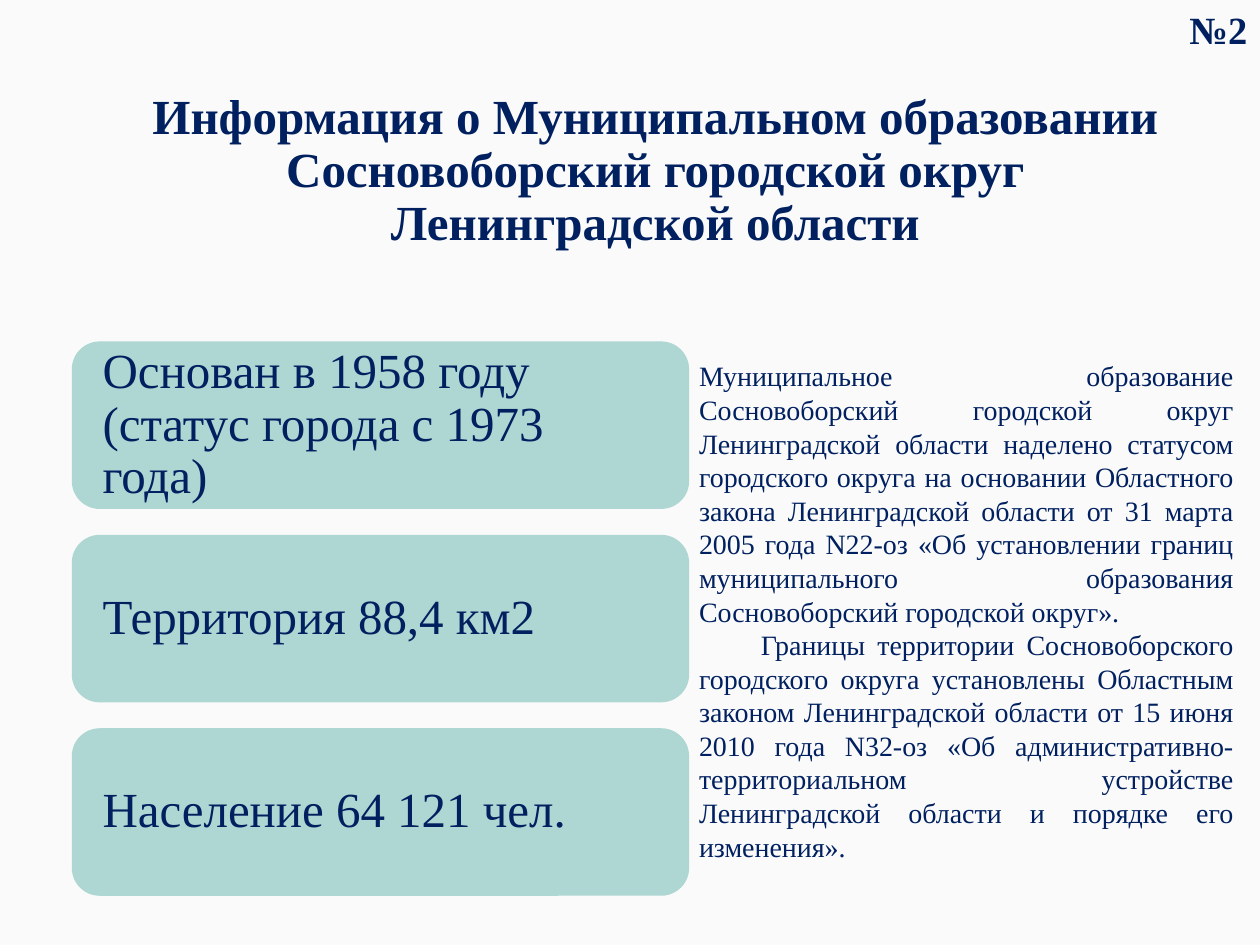
from pptx import Presentation
from pptx.dml.color import RGBColor
from pptx.enum.shapes import MSO_SHAPE
from pptx.enum.text import MSO_ANCHOR, MSO_AUTO_SIZE, PP_ALIGN
from pptx.util import Inches, Pt

COLUMNS, ROWS = 100, 75
TITLE = ("Информация о Муниципальном образовании "
         "Сосновоборский городской округ Ленинградской области")
FACTS = [
    "Основан в 1958 году (статус города с 1973 года)",
    "Территория 88,4 км2",
    "Население 64 121 чел.",
]
LEGAL_BASIS = [
    "Муниципальное образование Сосновоборский городской округ Ленинградской "
    "области наделено статусом городского округа на основании Областного закона "
    "Ленинградской области от 31 марта 2005 года N22-оз «Об установлении границ "
    "муниципального образования Сосновоборский городской округ».",
    "Границы территории Сосновоборского городского округа установлены Областным "
    "законом Ленинградской области от 15 июня 2010 года N32-оз «Об "
    "административно-территориальном устройстве Ленинградской области и порядке "
    "его изменения».",
]


def color(hex_value):
    return RGBColor.from_string(hex_value)


def apply(target, values):
    for name, value in values.items():
        setattr(target, name, value)


class SlideBuilder:
    font_name = "Times New Roman"
    ink = "002060"
    card_fill = "AED6D2"
    background = "FAFAFA"

    def __init__(self, presentation):
        self.unit_x = presentation.slide_width / COLUMNS
        self.unit_y = presentation.slide_height / ROWS
        self.slide = presentation.slides.add_slide(presentation.slide_layouts[5])
        fill = self.slide.background.fill
        fill.solid()
        fill.fore_color.rgb = color(self.background)

    def box(self, left, top, width, height):
        """Turn grid columns and rows into slide lengths."""
        return (round(left * self.unit_x), round(top * self.unit_y),
                round(width * self.unit_x), round(height * self.unit_y))

    def fill_text(self, shape, texts, size, frame, bold=False, **paragraph_format):
        text_frame = shape.text_frame
        apply(text_frame, frame)
        text_frame.text = "\n".join(texts)
        for paragraph in text_frame.paragraphs:
            apply(paragraph, paragraph_format)
            apply(paragraph.font, {"name": self.font_name, "size": Pt(size), "bold": bold})
            paragraph.font.color.rgb = color(self.ink)
        return text_frame

    def title(self, text, *area):
        shape = self.slide.shapes.title
        apply(shape, dict(zip(("left", "top", "width", "height"), self.box(*area))))
        frame = {"word_wrap": True, "auto_size": MSO_AUTO_SIZE.NONE,
                 "vertical_anchor": MSO_ANCHOR.MIDDLE}
        self.fill_text(shape, [text], 28, frame, bold=True,
                       alignment=PP_ALIGN.CENTER, line_spacing=0.9)

    def card(self, text, *area):
        shape = self.slide.shapes.add_shape(MSO_SHAPE.ROUNDED_RECTANGLE, *self.box(*area))
        shape.shadow.inherit = False
        shape.fill.solid()
        shape.fill.fore_color.rgb = color(self.card_fill)
        shape.line.fill.background()
        frame = {"word_wrap": True, "vertical_anchor": MSO_ANCHOR.MIDDLE,
                 "margin_left": Inches(0.18), "margin_right": Inches(0.18)}
        self.fill_text(shape, [text], 28, frame, alignment=PP_ALIGN.LEFT, line_spacing=0.9)

    def text(self, texts, size, *area, wrap=True, **formatting):
        shape = self.slide.shapes.add_textbox(*self.box(*area))
        frame = {"word_wrap": wrap, "auto_size": MSO_AUTO_SIZE.SHAPE_TO_FIT_TEXT}
        return self.fill_text(shape, texts, size, frame, **formatting)


def main():
    presentation = Presentation()
    apply(presentation, {"slide_width": Inches(10), "slide_height": Inches(7.5)})
    builder = SlideBuilder(presentation)

    builder.title(TITLE, 8.9, 6.4, 86.2, 14.5)
    card_height, gap = 13.3, 2.05
    for index, fact in enumerate(FACTS):
        builder.card(fact, 5.7, 27.1 + index * (card_height + gap), 49, card_height)

    legal_text = builder.text(LEGAL_BASIS, 16, 54.5, 28, 44.4, 41.4,
                              alignment=PP_ALIGN.JUSTIFY)
    properties = legal_text.paragraphs[1]._p.get_or_add_pPr()
    properties.set("indent", str(Inches(0.49)))

    builder.text(["№2"], 22, 93.4, 0, 6.6, 4.7, wrap=False,
                 bold=True, alignment=PP_ALIGN.CENTER)
    presentation.save("out.pptx")


if __name__ == "__main__":
    main()
